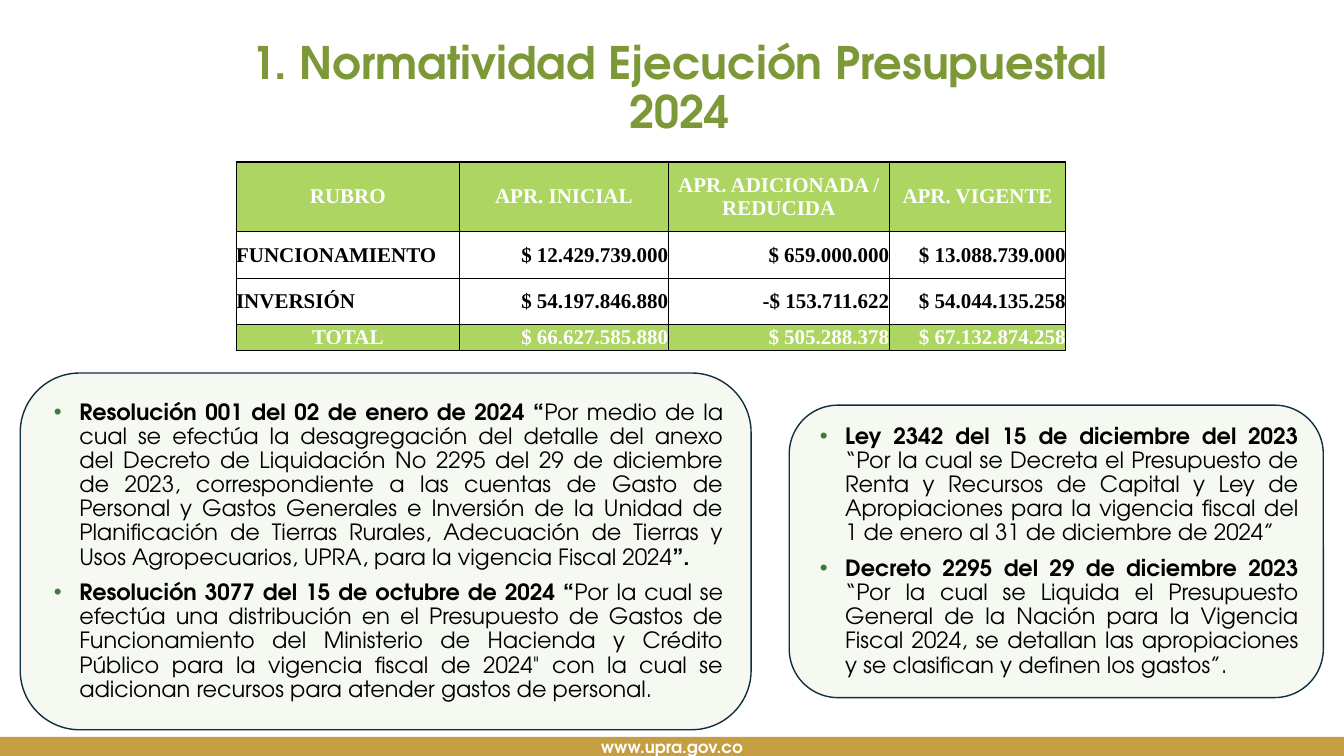
from lxml.etree import SubElement
from pptx import Presentation
from pptx.dml.color import RGBColor
from pptx.enum.shapes import MSO_SHAPE as Shape
from pptx.enum.text import MSO_ANCHOR as Anchor, MSO_AUTO_SIZE as AutoSize, PP_ALIGN as Align
from pptx.oxml.ns import qn
from pptx.util import Cm, Pt

COLORS = {
    "white": "FFFFFF", "black": "000000", "title": "7D9837", "header": "ACD561",
    "panel": "E2F0D9", "outline": "0F2F41", "bullet": "397C3C", "footer": "C59E41",
}
BUDGET = [
    ["RUBRO", "APR. INICIAL", "APR. ADICIONADA / REDUCIDA", "APR. VIGENTE"],
    ["FUNCIONAMIENTO", "$ 12.429.739.000", "$ 659.000.000", "$ 13.088.739.000"],
    ["INVERSIÓN", "$ 54.197.846.880", "-$ 153.711.622", "$ 54.044.135.258"],
    ["TOTAL", "$ 66.627.585.880", "$ 505.288.378", "$ 67.132.874.258"],
]
RESOLUTIONS = [
    [("Resolución 001 del 02 de enero de 2024 “", True),
     ("Por medio de la cual se efectúa la desagregación del detalle del anexo del Decreto "
      "de Liquidación No 2295 del 29 de diciembre de 2023, correspondiente a las cuentas de "
      "Gasto de Personal y Gastos Generales e Inversión de la Unidad de Planificación de "
      "Tierras Rurales, Adecuación de Tierras y Usos Agropecuarios, UPRA, para la vigencia "
      "Fiscal 2024", False),
     ("”.", True)],
    [("Resolución 3077 del 15 de octubre de 2024 “", True),
     ("Por la cual se efectúa una distribución en el Presupuesto de Gastos de Funcionamiento "
      "del Ministerio de Hacienda y Crédito Público para la vigencia fiscal de 2024\" con la "
      "cual se adicionan recursos para atender gastos de personal.", False)],
]
LAWS = [
    [("Ley 2342 del 15 de diciembre del 2023 ", True),
     ("“Por la cual se Decreta el Presupuesto de Renta y Recursos de Capital y Ley de "
      "Apropiaciones para la vigencia fiscal del 1 de enero al 31 de diciembre de 2024”", False)],
    [("Decreto 2295 del 29 de diciembre 2023", True),
     (" “Por la cual se Liquida el Presupuesto General de la Nación para la Vigencia Fiscal "
      "2024, se detallan las apropiaciones y se clasifican y definen los gastos”.", False)],
]


class BudgetSlide:
    """Holds the style and the slide, and draws each kind of element."""

    heading_font = "TeX Gyre Adventor"
    table_font = "Times New Roman"

    def __init__(self, deck):
        self.slide = deck.slides.add_slide(deck.slide_layouts[3])

    def color(self, name):
        return RGBColor.from_string(COLORS[name])

    def style(self, paragraph, font, size, color, bold=True):
        for run in paragraph.runs:
            run.font.name, run.font.size, run.font.bold = font, Pt(size), bold
            run.font.color.rgb = self.color(color)

    def place(self, holder, box):
        holder.left, holder.top, holder.width, holder.height = map(Cm, box)
        holder.text_frame.word_wrap = True
        holder.text_frame.auto_size = AutoSize.NONE

    def title(self, text, box):
        heading = self.slide.shapes.title
        self.place(heading, box)
        heading.text_frame.text = text
        heading.text_frame.vertical_anchor = Anchor.TOP
        line = heading.text_frame.paragraphs[0]
        line.alignment, line.line_spacing = Align.CENTER, 0.9
        self.style(line, self.heading_font, 32, "title")

    def block(self, kind, box, fill):
        block = self.slide.shapes.add_shape(kind, *map(Cm, box))
        block.shadow.inherit = False
        block.fill.solid()
        block.fill.fore_color.rgb = self.color(fill)
        block.line.fill.background()
        return block

    def footer(self, text, box):
        band = self.block(Shape.RECTANGLE, box, "footer")
        band.text_frame.text = text
        band.text_frame.vertical_anchor = Anchor.MIDDLE
        address = band.text_frame.paragraphs[0]
        address.alignment = Align.CENTER
        self.style(address, self.heading_font, 12, "white")

    def panel(self, box):
        panel = self.block(Shape.ROUNDED_RECTANGLE, box, "panel")
        panel.line.color.rgb, panel.line.width = self.color("outline"), Pt(1)
        tint = panel.element.spPr.find(qn("a:solidFill"))[0]
        SubElement(tint, qn("a:alpha"), val="34000")
        self.slide.shapes.element.insert(2, panel.element)

    def bullet(self, paragraph):
        props = paragraph._p.get_or_add_pPr()
        props.set("marL", str(Cm(0.79)))
        props.set("indent", str(Cm(-0.64)))
        SubElement(SubElement(props, qn("a:buClr")), qn("a:srgbClr"), val=COLORS["bullet"])
        SubElement(props, qn("a:buChar"), char="•")

    def rules(self, index, items, box):
        self.panel(box)
        body = self.slide.placeholders[index]
        self.place(body, box)
        frame = body.text_frame
        frame.vertical_anchor = Anchor.MIDDLE
        frame.margin_left = frame.margin_right = Cm(0.25 + 0.05 * box[3])
        for number, item in enumerate(items):
            rule = frame.add_paragraph() if number else frame.paragraphs[0]
            self.bullet(rule)
            rule.alignment, rule.line_spacing = Align.JUSTIFY, 0.9
            rule.space_before, rule.space_after = Pt(0), Pt(8)
            for text, bold in item:
                run = rule.add_run()
                run.text = text
            self.style(rule, self.heading_font, 16, "black")
            for run, (text, bold) in zip(rule.runs, item):
                run.font.bold = bold

    def borders(self, cell):
        props = cell._tc.get_or_add_tcPr()
        for side in "LRTB":
            edge = SubElement(props, qn(f"a:ln{side}"), w=str(Pt(1)))
            ink = SubElement(edge, qn("a:solidFill"))
            SubElement(ink, qn("a:srgbClr"), val=COLORS["black"])

    def table(self, rows, left, top, widths, heights):
        box = map(Cm, (left, top, sum(widths), sum(heights)))
        budget = self.slide.shapes.add_table(len(rows), len(widths), *box).table
        for column, width in zip(budget.columns, widths):
            column.width = Cm(width)
        for r, values in enumerate(rows):
            budget.rows[r].height = Cm(heights[r])
            banner = r in (0, len(rows) - 1)
            for c, value in enumerate(values):
                cell = budget.cell(r, c)
                self.borders(cell)
                cell.fill.solid()
                cell.fill.fore_color.rgb = self.color("header" if banner else "white")
                cell.margin_left = cell.margin_right = cell.margin_top = cell.margin_bottom = 0
                cell.vertical_anchor = Anchor.MIDDLE
                cell.text_frame.text = value
                entry = cell.text_frame.paragraphs[0]
                if r == 0 or (banner and c == 0):
                    entry.alignment = Align.CENTER
                else:
                    entry.alignment = Align.RIGHT if c else Align.LEFT
                self.style(entry, self.table_font, 15, "white" if banner else "black")


def main():
    deck = Presentation()
    deck.slide_width, deck.slide_height = Cm(33.87), Cm(19.05)
    page = BudgetSlide(deck)
    page.footer("www.upra.gov.co", (0, 18.57, 33.87, 0.48))
    page.title("1. Normatividad Ejecución Presupuestal 2024", (6.07, 0.91, 22.12, 4.17))
    page.rules(2, LAWS, (19.89, 10.21, 13.46, 7.37))
    page.rules(1, RESOLUTIONS, (0.51, 9.4, 18.42, 8.99))
    page.table(BUDGET, 5.95, 4.08, (5.63, 5.26, 5.57, 4.45), (1.76, 1.17, 1.17, 0.66))
    deck.save("out.pptx")


if __name__ == "__main__":
    main()
